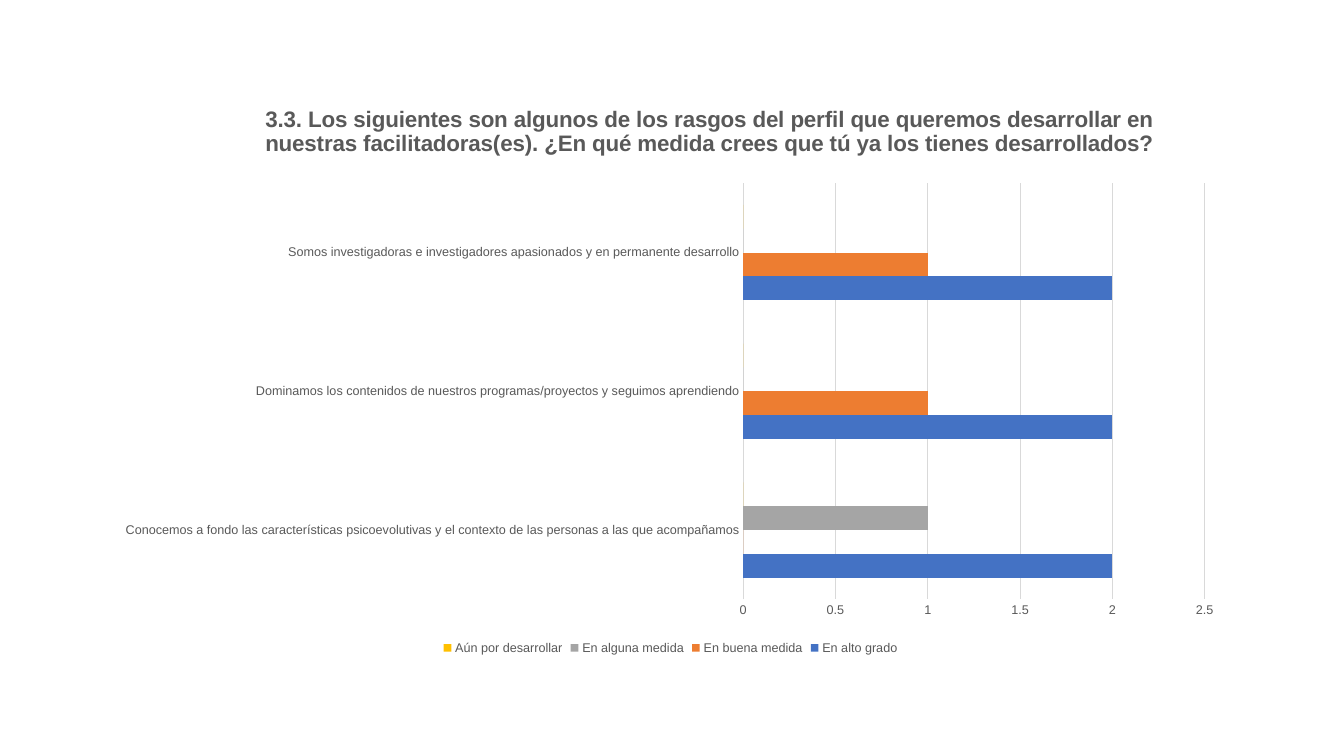
from lxml import etree
from pptx import Presentation
from pptx import util as u
from pptx.chart.data import CategoryChartData
from pptx.dml.color import RGBColor
from pptx.enum import chart as ch
from pptx.oxml.ns import qn

TITLE = ("3.3. Los siguientes son algunos de los rasgos del perfil que queremos "
         "desarrollar en nuestras facilitadoras(es). ¿En qué medida crees que tú "
         "ya los tienes desarrollados?")
TRAITS = [
    "Conocemos a fondo las características psicoevolutivas y el contexto de las personas a las que acompañamos",
    "Dominamos los contenidos de nuestros programas/proyectos y seguimos aprendiendo",
    "Somos investigadoras e investigadores apasionados y en permanente desarrollo",
]
GRADES = [
    ("En alto grado", (2, 2, 2), "4472C4"),
    ("En buena medida", (0, 1, 1), "ED7D31"),
    ("En alguna medida", (1, 0, 0), "A5A5A5"),
    ("Aún por desarrollar", (0, 0, 0), "FFC000"),
]


def rgb(code):
    return RGBColor.from_string(code)


def place(parent, index, inner=False, **spots):
    """Give a chart part a manual layout, in fractions of the chart."""
    for old in parent.findall(qn("c:layout")):
        parent.remove(old)
    layout = etree.Element(qn("c:layout"))
    manual = etree.SubElement(layout, qn("c:manualLayout"))
    if inner:
        etree.SubElement(manual, qn("c:layoutTarget"), val="inner")
    for side in "xy":
        etree.SubElement(manual, qn(f"c:{side}Mode"), val="edge")
    for key, value in spots.items():
        etree.SubElement(manual, qn(f"c:{key}"), val=str(value))
    parent.insert(index, layout)


class Deck:
    face, ink, rule = "Arial", "595959", "D9D9D9"

    def __init__(self, width, height):
        self.prs = Presentation()
        self.prs.slide_width, self.prs.slide_height = u.Pt(width), u.Pt(height)
        self.slide = self.prs.slides.add_slide(self.prs.slide_layouts[6])

    def font(self, font, size, bold=False):
        font.name, font.size, font.bold = self.face, u.Pt(size), bold
        font.color.rgb = rgb(self.ink)

    def line(self, line):
        line.color.rgb, line.width = rgb(self.rule), u.Pt(0.75)

    def bars(self, left, top, width, height, names, rows):
        data = CategoryChartData()
        data.categories = names
        for name, values, _ in rows:
            data.add_series(name, values)
        chart = self.slide.shapes.add_chart(
            ch.XL_CHART_TYPE.BAR_CLUSTERED, u.Pt(left), u.Pt(top),
            u.Pt(width), u.Pt(height), data).chart
        self.font(chart.font, 10)
        plot = chart.plots[0]
        plot.gap_width, plot.overlap, plot.vary_by_categories = 182, 0, False
        for series, (_, _, color) in zip(plot.series, rows):
            series.format.fill.solid()
            series.format.fill.fore_color.rgb = rgb(color)
        return chart

    def axes(self, chart, top, step):
        for axis in (chart.category_axis, chart.value_axis):
            axis.major_tick_mark = axis.minor_tick_mark = ch.XL_TICK_MARK.NONE
            self.font(axis.tick_labels.font, 9)
        self.line(chart.category_axis.format.line)
        scale = chart.value_axis
        scale.minimum_scale, scale.maximum_scale, scale.major_unit = 0, top, step
        scale.format.line.fill.background()
        self.line(scale.major_gridlines.format.line)

    def title(self, chart, words):
        chart.has_title = True
        frame = chart.chart_title.text_frame
        frame.text = words
        self.font(frame.paragraphs[0].font, 16, True)

    def legend(self, chart):
        chart.has_legend = True
        chart.legend.position = ch.XL_LEGEND_POSITION.BOTTOM
        chart.legend.include_in_layout = False
        self.font(chart.legend.font, 9)


def main():
    deck = Deck(960, 540)
    chart = deck.bars(74, 67, 810, 404, TRAITS, GRADES)
    deck.axes(chart, 2.5, 0.5)
    deck.title(chart, TITLE)
    deck.legend(chart)
    root = chart.plots[0]._element.getparent()
    place(root, 0, inner=True, x=0.564, y=0.158, w=0.407, h=0.736)
    place(chart.chart_title._element, 1, x=0.139, y=0.013)
    deck.prs.save("out.pptx")


if __name__ == "__main__":
    main()
